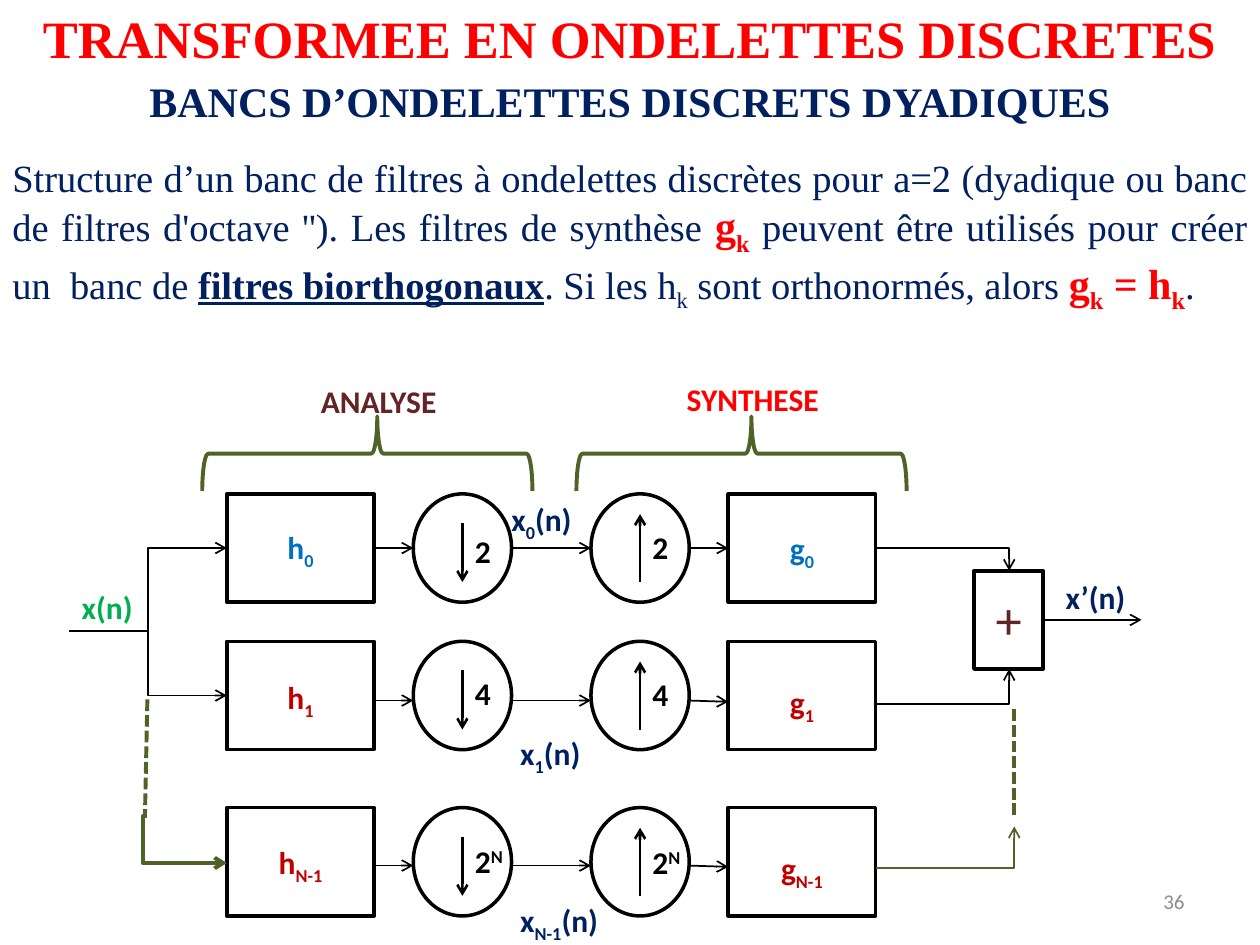
from lxml.etree import SubElement
from pptx import Presentation
from pptx.dml.color import RGBColor
from pptx.enum.dml import MSO_LINE as Dash
from pptx.enum.shapes import MSO_CONNECTOR as Link, MSO_SHAPE as Form
from pptx.enum.text import MSO_ANCHOR as Anchor, PP_ALIGN as Align
from pptx.oxml.ns import qn
from pptx.util import Inches, Pt

BLACK = RGBColor(0x00, 0x00, 0x00)
NAVY = RGBColor(0x00, 0x20, 0x60)
BLUE = RGBColor(0x00, 0x70, 0xC0)
RED = RGBColor(0xFF, 0x00, 0x00)
CRIMSON = RGBColor(0xC0, 0x00, 0x00)
MAROON = RGBColor(0x63, 0x25, 0x23)
GREEN = RGBColor(0x00, 0xB0, 0x50)
OLIVE = RGBColor(0x4F, 0x62, 0x28)
GREY = RGBColor(0x8C, 0x8C, 0x8C)

SUB = {"baseline": -25000}
SUPER = {"baseline": 30000}
LABEL = {"name": "Calibri", "size": Pt(18), "bold": True}
SERIF = {"name": "Times New Roman", "size": Pt(22), "bold": False}
STRONG = {"size": Pt(24), "bold": True, "color": RED}

deck = Presentation()
deck.slide_width, deck.slide_height = Inches(10), Inches(7.5)
page = deck.slides.add_slide(deck.slide_layouts[6])


def write(left, top, width, height, spans, color, style=LABEL, align=Align.LEFT):
    box = page.shapes.add_textbox(Inches(left), Inches(top), Inches(width), Inches(height))
    box.text_frame.word_wrap = True
    para = box.text_frame.paragraphs[0]
    para.alignment = align
    for text, changes in spans:
        span = para.add_run()
        span.text = text
        values = {"color": color, **style, **changes}
        span.font.color.rgb = values.pop("color")
        baseline = values.pop("baseline", None)
        if baseline:
            span.font._element.set("baseline", str(baseline))
        for name, value in values.items():
            setattr(span.font, name, value)
    return box


def connect(start, end, width=1, color=BLACK, arrow=True, bend=None, adjust=None):
    kind = Link.ELBOW if bend else Link.STRAIGHT
    line = page.shapes.add_connector(kind, *[Inches(value) for value in (*start, *end)])
    line.line.color.rgb = color
    line.line.width = Pt(width)
    properties = line._element.spPr
    if arrow:
        SubElement(line.line._get_or_add_ln(), qn("a:tailEnd"), type="arrow")
    SubElement(properties, qn("a:effectLst"))
    if bend:
        geometry = properties.find(qn("a:prstGeom"))
        geometry.set("prst", bend)
        if adjust is not None:
            guides = geometry.find(qn("a:avLst"))
            SubElement(guides, qn("a:gd"), name="adj1", fmla=f"val {round(adjust * 100000)}")
    return line


write(0, 0, 10, 0.61, [("TRANSFORMEE EN ONDELETTES DISCRETES", {})], RED,
      {**SERIF, "size": Pt(30), "bold": True}, Align.CENTER)
write(0, 0.55, 10, 0.5, [("BANCS D’ONDELETTES DISCRETS DYADIQUES", {})], NAVY,
      {**SERIF, "size": Pt(24), "bold": True}, Align.CENTER)
write(0, 1.17, 10, 1.28, [
    ("Structure d’un banc de filtres à ondelettes discrètes pour a=2 (dyadique ou banc "
     "de filtres d'octave ''). Les filtres de synthèse ", {}),
    ("g", STRONG), ("k", {**STRONG, **SUB}),
    (" peuvent être utilisés pour créer un  banc de ", {}),
    ("filtres biorthogonaux", {"bold": True, "underline": True}),
    (". Si les h", {}), ("k", SUB), (" sont orthonormés, alors ", {}),
    ("g", STRONG), ("k", {**STRONG, **SUB}), (" = h", STRONG), ("k", {**STRONG, **SUB}),
    (".", {}),
], NAVY, SERIF, Align.JUSTIFY)

for left, top, title, color in ((1.64, 2.98, "ANALYSE", MAROON), (4.61, 2.97, "SYNTHESE", RED)):
    write(left, top, 2.73, 0.4, [(title, {})], color, align=Align.CENTER)
    brace = page.shapes.add_shape(Form.LEFT_BRACE, Inches(left + 0.98), Inches(2.29),
                                  Inches(0.59), Inches(2.62))
    brace.rotation = 90
    brace.adjustments[0], brace.adjustments[1] = 0.08, 0.47
    brace.shadow.inherit = False
    brace.fill.background()
    brace.line.color.rgb = OLIVE
    brace.line.width = Pt(2.25)

rows = (
    (3.92, 4.35, "0", "2", "", BLUE, (4.14, 4.15, 4.17, 4.14), (3.96, 3.92, 0.7)),
    (5.09, 5.56, "1", "4", "", CRIMSON, (5.33, 5.37, 5.3, 5.31), (4.03, 5.78, 0.7)),
    (6.41, 6.87, "N-1", "2", "N", CRIMSON, (6.64, 6.69, 6.63, 6.64), (4.03, 7.1, 0.89)),
)
blocks = ((Form.RECTANGLE, 1.8, 1.17), (Form.OVAL, 3.28, 0.78),
          (Form.OVAL, 4.69, 0.78), (Form.RECTANGLE, 5.78, 1.17))
outlines = [(form, left, row[0], width, 0.86) for row in rows for form, left, width in blocks]
outlines.append((Form.RECTANGLE, 7.73, 4.53, 0.55, 0.78))
shapes = []
for form, *place in outlines:
    shape = page.shapes.add_shape(form, *[Inches(value) for value in place])
    shape.shadow.inherit = False
    shape.fill.background()
    shape.line.color.rgb = BLACK
    shape.line.width = Pt(2)
    shapes.append(shape)
adder = shapes[-1]

for index, (top, axis, order, factor, power, color, tops, signal) in enumerate(rows):
    analysis, synthesis = shapes[4 * index], shapes[4 * index + 3]
    connect((3.67, top + 0.23), (3.67, top + 0.7), 1.5)
    connect((5.08, top + 0.7), (5.08, top + 0.16), 1.5)
    entry = connect((2.97, axis), (3.28, axis))
    connect((4.06, axis), (4.69, axis))
    leave = connect((5.47, axis), (5.78, axis + 0.01))
    if index == 0:
        entry.begin_connect(analysis, 3)
        leave.end_connect(synthesis, 1)
    rate = [(factor, {})] + ([(power, SUPER)] if power else [])
    write(1.8, tops[0], 1.17, 0.4, [("h", {}), (order, SUB)], color, align=Align.CENTER)
    write(5.78, tops[1], 1.17, 0.4, [("g", {}), (order, SUB)], color, align=Align.CENTER)
    write(3.67, tops[2], 0.47, 0.4, rate, BLACK)
    write(5.08, tops[3], 0.47, 0.4, rate, BLACK)
    write(*signal, 0.4, [("x", {}), (order, SUB), ("(n)", {})], NAVY)

connect((0.55, 5.01), (1.8, 4.35), bend="bentConnector3", adjust=0.5)
connect((0.55, 5.01), (1.8, 5.52), bend="bentConnector3", adjust=0.5)
connect((6.95, 4.35), (8.01, 4.53), bend="bentConnector2")
connect((6.95, 5.59), (8.01, 5.31), bend="bentConnector2")
connect((1.17, 6.48), (1.8, 6.85), 2.25, OLIVE, bend="bentConnector3", adjust=-0.06)
connect((6.95, 6.89), (8.05, 6.56), 1, OLIVE, bend="bentConnector2")
connect((8.28, 4.92), (9.06, 4.92)).begin_connect(adder, 3)
for start, end in (((1.17, 5.55), (1.15, 6.49)), ((8.05, 5.63), (8.05, 6.5))):
    connect(start, end, 2.25, OLIVE, arrow=False).line.dash_style = Dash.SQUARE_DOT

write(0.55, 4.62, 0.7, 0.4, [("x(n)", {})], GREEN)
write(8.36, 4.54, 0.7, 0.4, [("x’(n)", {})], NAVY)
write(7.73, 4.61, 0.55, 0.61, [("+", {})], MAROON,
      {**LABEL, "size": Pt(30), "bold": False}, Align.CENTER)
number = write(7.17, 6.95, 2.33, 0.4, [("36", {})], GREY,
               {**LABEL, "size": Pt(12), "bold": False}, Align.RIGHT)
number.text_frame.vertical_anchor = Anchor.MIDDLE

deck.save("out.pptx")
